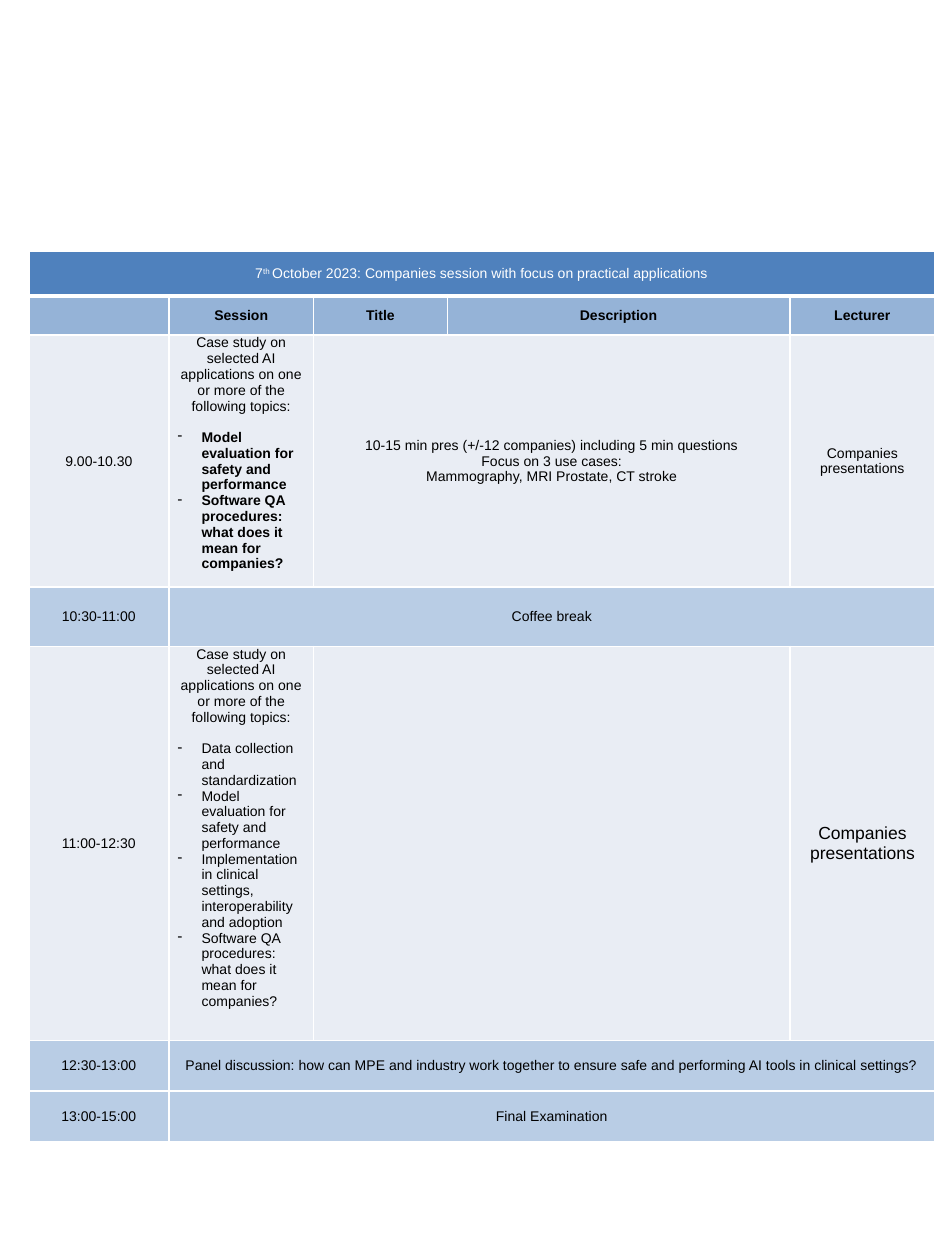
from dataclasses import dataclass

from lxml import etree
from pptx import Presentation
from pptx.dml.color import RGBColor
from pptx.enum.text import MSO_ANCHOR, PP_ALIGN
from pptx.oxml.ns import qn
from pptx.util import Inches, Pt

CENTER, LEFT = PP_ALIGN.CENTER, PP_ALIGN.LEFT
MIDDLE, TOP = MSO_ANCHOR.MIDDLE, MSO_ANCHOR.TOP

WHITE = RGBColor(0xFF, 0xFF, 0xFF)
BLACK = RGBColor(0x00, 0x00, 0x00)
BANNER = RGBColor(0x4F, 0x81, 0xBD)
HEADING = RGBColor(0x95, 0xB3, 0xD7)
SESSION = RGBColor(0xE9, 0xED, 0xF4)
BREAK = RGBColor(0xB9, 0xCD, 0xE5)

FONT = "Arial"
COLUMN_WIDTHS = (1.11, 1.15, 1.06, 2.72, 1.15)
ROW_HEIGHTS = (0.36, 0.31, 2.0, 0.47, 3.13, 0.4, 0.4)
ROW_FILLS = (BANNER, HEADING, SESSION, BREAK, SESSION, BREAK, BREAK)
INTRO = "Case study on selected AI applications on one or more of the following topics:"
EVALUATION = "Model evaluation for safety and performance"
QUALITY = "Software QA procedures: what does it mean for companies?"


@dataclass(frozen=True)
class Run:
    text: str
    raised: bool = False


@dataclass(frozen=True)
class Entry:
    row: int
    column: int
    lines: tuple[tuple[Run, ...], ...] = ()
    bullets: tuple[str, ...] = ()
    span: int = 1
    size: int = 8
    color: RGBColor = BLACK
    bold: bool = False
    bold_bullets: bool = False


def plain(*texts: str) -> tuple[tuple[Run, ...], ...]:
    return tuple((Run(text),) for text in texts)


ENTRIES = (
    Entry(0, 0, ((Run("7"), Run("th ", raised=True),
                  Run("October 2023: Companies session with focus on practical applications")),),
          span=5, color=WHITE),
    *(Entry(1, column, plain(text), bold=True)
      for column, text in enumerate(("Session", "Title", "Description", "Lecturer"), start=1)),
    Entry(2, 0, plain("9.00-10.30")),
    Entry(2, 1, plain(INTRO), (EVALUATION, QUALITY), bold_bullets=True),
    Entry(2, 2, plain("10-15 min pres (+/-12 companies) including 5 min questions",
                      "Focus on 3 use cases:",
                      "Mammography, MRI Prostate, CT stroke"), span=2),
    Entry(2, 4, plain("Companies presentations")),
    Entry(3, 0, plain("10:30-11:00")),
    Entry(3, 1, plain("Coffee break"), span=4),
    Entry(4, 0, plain("11:00-12:30")),
    Entry(4, 1, plain(INTRO), (
        "Data collection and standardization", EVALUATION,
        "Implementation in clinical settings, interoperability and adoption", QUALITY)),
    Entry(4, 2, span=2),
    Entry(4, 4, plain("Companies presentations"), size=10),
    Entry(5, 0, plain("12:30-13:00")),
    Entry(5, 1, plain("Panel discussion: how can MPE and industry work together to ensure "
                      "safe and performing AI tools in clinical settings?"), span=4),
    Entry(6, 0, plain("13:00-15:00")),
    Entry(6, 1, plain("Final Examination"), span=4),
)


def style_cell(cell, fill: RGBColor, bottom_width: float) -> None:
    """Set margins, white borders and fill."""
    cell.margin_left = cell.margin_right = Inches(0.07)
    cell.margin_top = cell.margin_bottom = 0
    cell.vertical_anchor = MIDDLE
    properties = cell._tc.get_or_add_tcPr()
    for side, width in (("L", 1), ("R", 1), ("T", 1), ("B", bottom_width)):
        line = etree.SubElement(properties, qn(f"a:ln{side}"), w=str(Pt(width)))
        solid = etree.SubElement(line, qn("a:solidFill"))
        etree.SubElement(solid, qn("a:srgbClr"), val=str(WHITE))
    cell.fill.solid()
    cell.fill.fore_color.rgb = fill


def add_dash(paragraph) -> None:
    """Give a paragraph a black dash and a hanging indent."""
    indent = Inches(0.19)
    properties = paragraph._p.get_or_add_pPr()
    properties.set("marL", str(indent))
    properties.set("indent", str(-indent))
    color = etree.SubElement(properties, qn("a:buClr"))
    etree.SubElement(color, qn("a:srgbClr"), val=str(BLACK))
    etree.SubElement(properties, qn("a:buChar"), char="-")


def add_run(paragraph, content: Run, entry: Entry, bold: bool) -> None:
    run = paragraph.add_run()
    run.text = content.text
    run.font.name = FONT
    run.font.size = Pt(entry.size)
    run.font.bold = bold
    run.font.color.rgb = entry.color
    if content.raised:
        run._r.get_or_add_rPr().set("baseline", "30000")


def fill_entry(table, entry: Entry) -> None:
    cell = table.cell(entry.row, entry.column)
    if entry.span > 1:
        cell.merge(table.cell(entry.row, entry.column + entry.span - 1))
    frame = cell.text_frame
    for index, line in enumerate(entry.lines):
        paragraph = frame.add_paragraph() if index else frame.paragraphs[0]
        paragraph.alignment = CENTER
        for content in line:
            add_run(paragraph, content, entry, entry.bold)
    for index, text in enumerate(entry.bullets):
        paragraph = frame.add_paragraph()
        paragraph.alignment = LEFT
        if index == 0:
            paragraph.space_before = Pt(9)
            cell.vertical_anchor = TOP
        add_dash(paragraph)
        add_run(paragraph, Run(text), entry, entry.bold_bullets)


def main() -> None:
    presentation = Presentation()
    presentation.slide_width = Inches(7.5)
    presentation.slide_height = Inches(10)
    slide = presentation.slides.add_slide(presentation.slide_layouts[6])

    # Timetable grid
    table = slide.shapes.add_table(
        len(ROW_HEIGHTS), len(COLUMN_WIDTHS), Inches(0.23), Inches(1.99),
        Inches(sum(COLUMN_WIDTHS)), Inches(sum(ROW_HEIGHTS))).table
    for column, width in zip(table.columns, COLUMN_WIDTHS):
        column.width = Inches(width)
    for index, (row, height) in enumerate(zip(table.rows, ROW_HEIGHTS)):
        row.height = Inches(height)
        for cell in row.cells:
            style_cell(cell, ROW_FILLS[index], 1 if index else 3)

    # Timetable text
    for entry in ENTRIES:
        fill_entry(table, entry)

    presentation.save("out.pptx")


if __name__ == "__main__":
    main()
